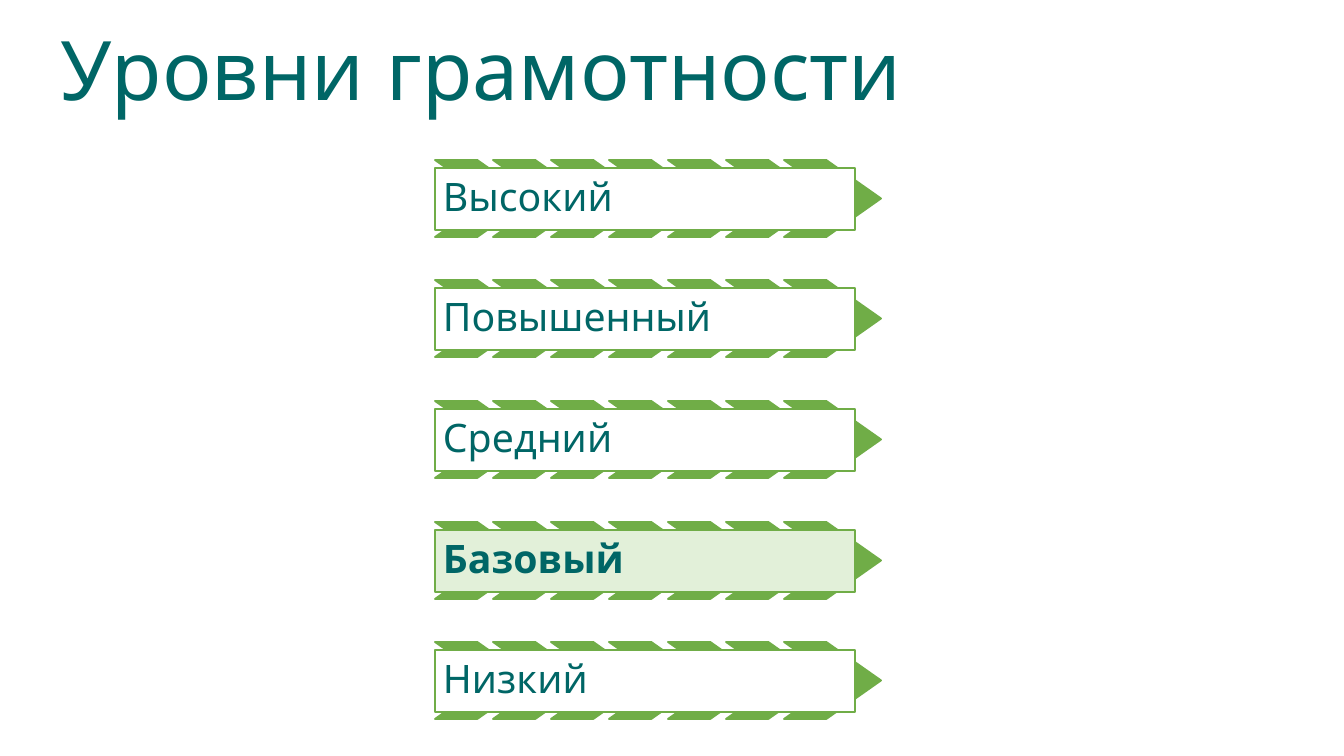
from pptx import Presentation
from pptx import util as u
from pptx.dml.color import RGBColor
from pptx.enum import shapes, text

PX = 914400 / 134.4
TEAL = RGBColor(0x00, 0x66, 0x66)
GREEN = RGBColor(0x70, 0xAD, 0x47)
PALE_GREEN = RGBColor(0xE2, 0xF0, 0xD9)
WHITE = RGBColor(0xFF, 0xFF, 0xFF)
FONT = "Quicksand"

LEVELS = ["Высокий", "Повышенный", "Средний", "Базовый", "Низкий"]
HIGHLIGHTED = "Базовый"
CHEVRONS = 7
LEFT, TOP = 435, 160
LAST_CHEVRON_OFFSET = 349
LAST_ROW_OFFSET = 482


def px(length):
    return u.Emu(round(length * PX))


def add_outlined(group, kind, frame, fill):
    shape = group.shapes.add_shape(kind, *map(px, frame))
    shape.shadow.inherit = False
    shape.fill.solid()
    shape.fill.fore_color.rgb = fill
    shape.line.color.rgb = GREEN
    shape.line.width = u.Pt(1)
    return shape


deck = Presentation()
deck.slide_width, deck.slide_height = px(1344), px(756)
page = deck.slides.add_slide(deck.slide_layouts[5])

title = page.shapes.title
title.left, title.top, title.width, title.height = map(px, (47, 0, 1158, 147))
title.text_frame.vertical_anchor = text.MSO_ANCHOR.MIDDLE
para = title.text_frame.paragraphs[0]
para.alignment = text.PP_ALIGN.LEFT
para.line_spacing = 0.9
span = para.add_run()
span.text = "Уровни грамотности"
span.font.name = FONT
span.font.size = u.Pt(44)
span.font.color.rgb = TEAL

for row, level in enumerate(LEVELS):
    top = TOP + round(row * LAST_ROW_OFFSET / (len(LEVELS) - 1))
    group = page.shapes.add_group_shape()
    for column in range(CHEVRONS):
        left = LEFT + round(column * LAST_CHEVRON_OFFSET / (CHEVRONS - 1))
        chevron = add_outlined(group, shapes.MSO_SHAPE.CHEVRON, (left, top, 97, 77), GREEN)
        chevron.adjustments[0] = 0.71

    highlighted = level == HIGHLIGHTED
    box = add_outlined(group, shapes.MSO_SHAPE.RECTANGLE, (LEFT, top + 8, 420, 62),
                       PALE_GREEN if highlighted else WHITE)
    frame = box.text_frame
    frame.word_wrap = True
    frame.vertical_anchor = text.MSO_ANCHOR.MIDDLE
    frame.margin_left = frame.margin_right = px(8)
    frame.margin_top = frame.margin_bottom = px(8)
    para = frame.paragraphs[0]
    para.alignment = text.PP_ALIGN.LEFT
    para.line_spacing = 0.9
    span = para.add_run()
    span.text = level
    span.font.name = FONT
    span.font.size = u.Pt(21)
    span.font.bold = highlighted
    span.font.color.rgb = TEAL

deck.save("out.pptx")
